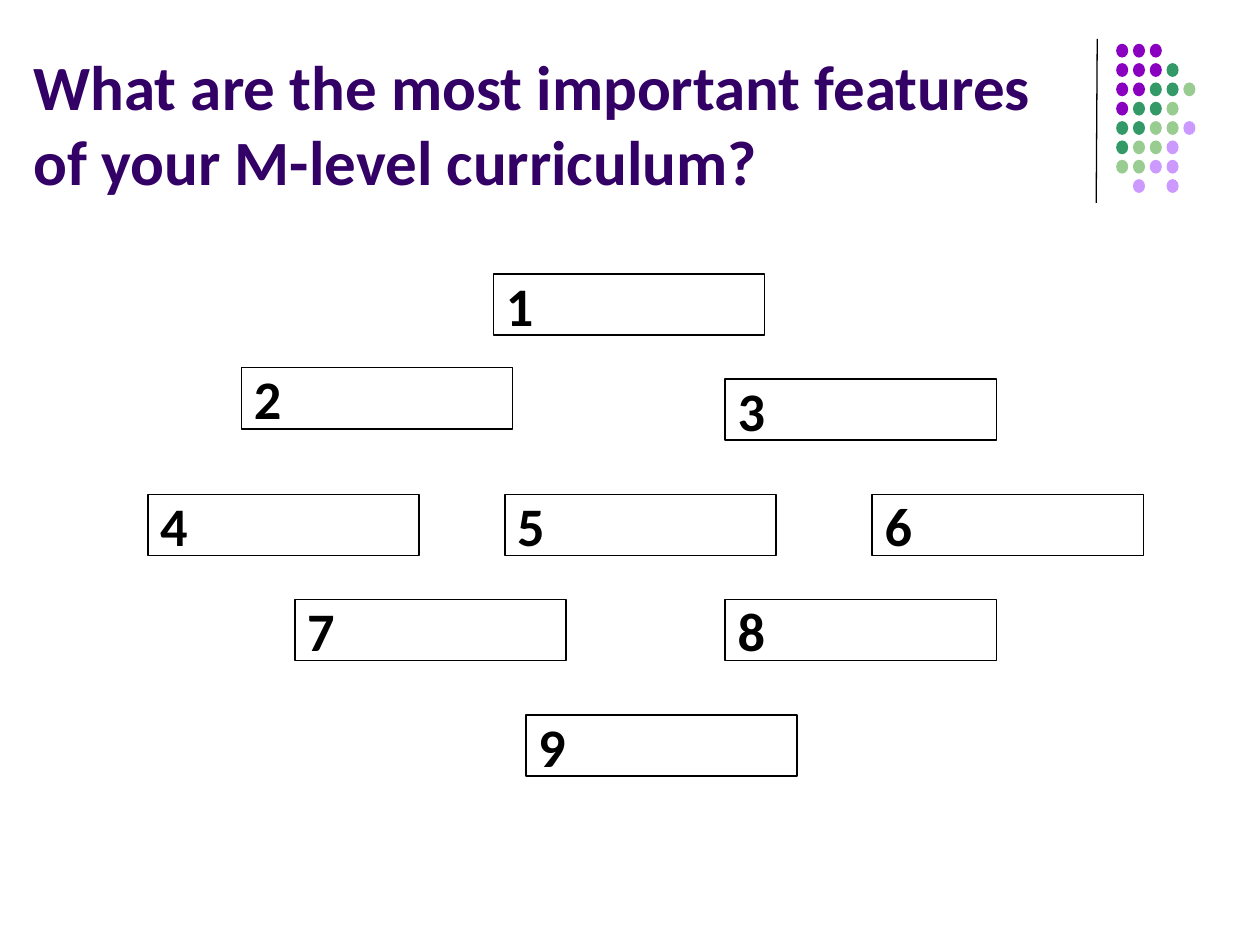
import pptx
import pptx.dml.color
import pptx.enum.shapes
import pptx.enum.text
import pptx.oxml.ns
import pptx.util
from lxml import etree

Pt = pptx.util.Pt
SHAPES = pptx.enum.shapes.MSO_SHAPE

TITLE = "What are the most important features\nof your M-level curriculum?"
DOT_COLOURS = {"P": "8A00C0", "G": "339966", "L": "99CC91", "V": "CC99FF"}
DOT_ROWS = ["PPP", "PPPG", "PPGGL", "PGGL", "GGLLV", "GLLV", "LLVV", " V V"]
RANK_POSITIONS = [
    (282, 156.5),
    (138, 210), (414.5, 216.5),
    (84.5, 282.5), (288.5, 282.5), (498.5, 282.5),
    (168.5, 342.5), (414.5, 342.5),
    (300.5, 408.5),
]


def colour(hex_code):
    return pptx.dml.color.RGBColor.from_string(hex_code)


def format_text(frame, size, hex_code):
    frame.word_wrap = True
    frame.auto_size = pptx.enum.text.MSO_AUTO_SIZE.NONE
    frame.vertical_anchor = pptx.enum.text.MSO_ANCHOR.MIDDLE
    for paragraph in frame.paragraphs:
        paragraph.alignment = pptx.enum.text.PP_ALIGN.LEFT
        for run in paragraph.runs:
            run.font.name = "Calibri"
            run.font.size = Pt(size)
            run.font.bold = True
            run.font.color.rgb = colour(hex_code)


def add_divider(slide):
    divider = slide.shapes.add_connector(
        pptx.enum.shapes.MSO_CONNECTOR.STRAIGHT,
        Pt(627), Pt(22.3), Pt(626.4), Pt(116))
    divider.line.color.rgb = colour("000000")
    divider.line.width = Pt(0.75)
    properties = divider._element.spPr
    etree.SubElement(properties, pptx.oxml.ns.qn("a:effectLst"))


def add_dots(slide):
    dots = slide.shapes.add_group_shape()
    for row, codes in enumerate(DOT_ROWS):
        for column, code in enumerate(codes):
            if code == " ":
                continue
            dot = dots.shapes.add_shape(
                SHAPES.OVAL, Pt(637.8 + 9.6 * column), Pt(25 + 11.05 * row),
                Pt(6.9), Pt(7.9))
            dot.shadow.inherit = False
            dot.fill.solid()
            dot.fill.fore_color.rgb = colour(DOT_COLOURS[code])
            dot.line.fill.background()


def add_title(slide):
    title = slide.shapes.title
    title.left, title.top = Pt(12), Pt(27.5)
    title.width, title.height = Pt(613), Pt(85.5)
    title.text_frame.text = TITLE
    format_text(title.text_frame, 36, "330066")


def add_rank(slide, rank, left, top):
    box = slide.shapes.add_shape(
        SHAPES.RECTANGLE, Pt(left), Pt(top), Pt(155), Pt(35))
    box.shadow.inherit = False
    box.fill.background()
    box.line.color.rgb = colour("000000")
    box.line.width = Pt(1)
    box.text_frame.text = str(rank)
    format_text(box.text_frame, 31, "000000")


def main():
    deck = pptx.Presentation()
    deck.slide_width, deck.slide_height = Pt(720), Pt(540)
    slide = deck.slides.add_slide(deck.slide_layouts[5])
    slide.background.fill.solid()
    slide.background.fill.fore_color.rgb = colour("FFFFFF")
    add_divider(slide)
    add_dots(slide)
    add_title(slide)
    for rank, (left, top) in enumerate(RANK_POSITIONS, start=1):
        add_rank(slide, rank, left, top)
    deck.save("out.pptx")


if __name__ == "__main__":
    main()
